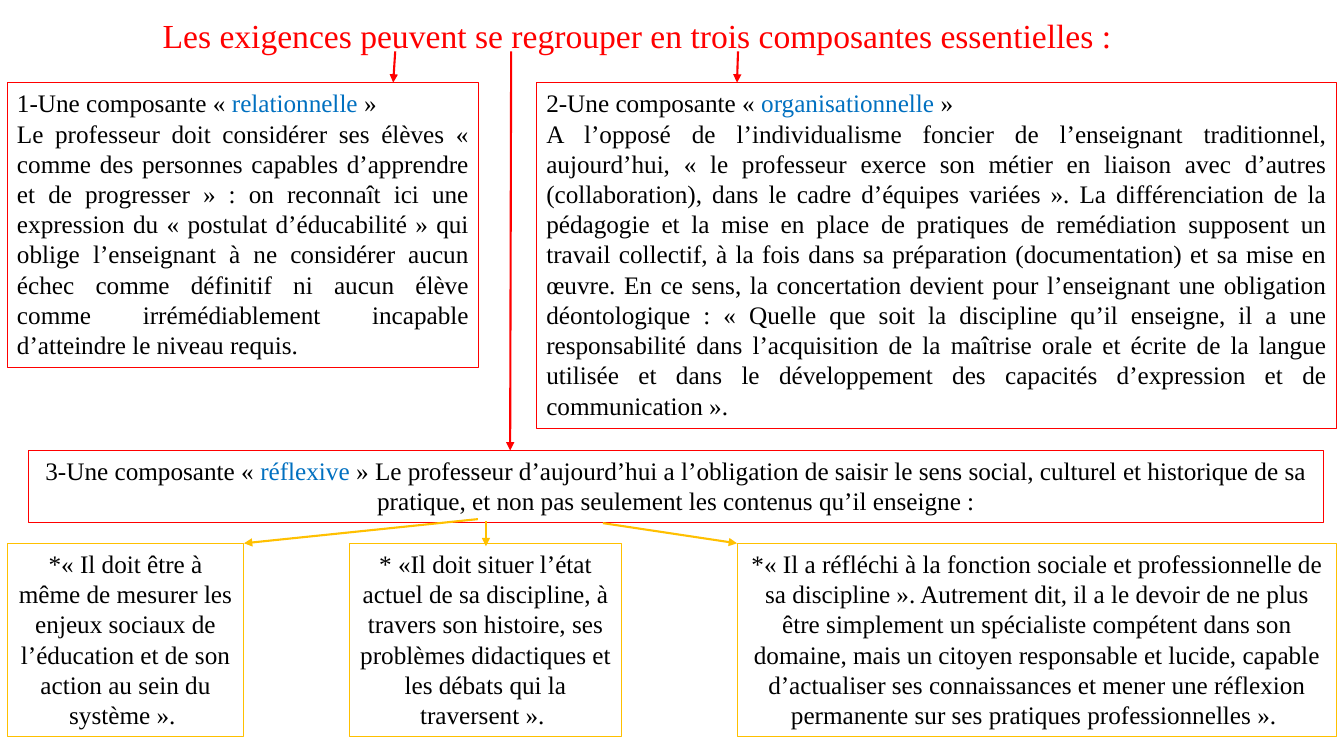
from lxml import etree
from pptx import Presentation
from pptx.dml.color import RGBColor
from pptx.enum.shapes import MSO_CONNECTOR, MSO_SHAPE
from pptx.enum.text import MSO_ANCHOR, MSO_AUTO_SIZE, PP_ALIGN
from pptx.oxml.ns import qn
from pptx.util import Inches, Pt

CENTER, JUSTIFY = PP_ALIGN.CENTER, PP_ALIGN.JUSTIFY
TOP, NO_FIT = MSO_ANCHOR.TOP, MSO_AUTO_SIZE.NONE
RECTANGLE, STRAIGHT = MSO_SHAPE.RECTANGLE, MSO_CONNECTOR.STRAIGHT
TITLE_ONLY = 5
FONT = "Times New Roman"
COLORS = {"red": "FF0000", "gold": "FFC000", "blue": "0070C0", "black": "000000"}

TITLE = "Les exigences peuvent se regrouper en trois composantes essentielles :"

# Each paragraph is a list of (text, colour) runs.
RELATIONAL = [
    [("1-Une composante « ", "black"), ("relationnelle", "blue"), (" » ", "black")],
    [("Le professeur doit considérer ses élèves « comme des personnes capables "
      "d’apprendre et de progresser » : on reconnaît ici une expression du "
      "« postulat d’éducabilité » qui oblige l’enseignant à ne considérer aucun "
      "échec comme définitif ni aucun élève comme irrémédiablement incapable "
      "d’atteindre le niveau requis.", "black")],
]
ORGANISATIONAL = [
    [("2-Une composante « ", "black"), ("organisationnelle", "blue"), (" » ", "black")],
    [("A l’opposé de l’individualisme foncier de l’enseignant traditionnel, "
      "aujourd’hui, « le professeur exerce son métier en liaison avec d’autres "
      "(collaboration), dans le cadre d’équipes variées ». La différenciation de "
      "la pédagogie et la mise en place de pratiques de remédiation supposent un "
      "travail collectif, à la fois dans sa préparation (documentation) et sa "
      "mise en œuvre. En ce sens, la concertation devient pour l’enseignant une "
      "obligation déontologique : « Quelle que soit la discipline qu’il enseigne, "
      "il a une responsabilité dans l’acquisition de la maîtrise orale et écrite "
      "de la langue utilisée et dans le développement des capacités d’expression "
      "et de communication ».", "black")],
]
REFLEXIVE = [
    [("3-Une composante « ", "black"), ("réflexive", "blue"),
     (" » Le professeur d’aujourd’hui a l’obligation de saisir le sens social, "
      "culturel et historique de sa pratique, et non pas seulement les contenus "
      "qu’il enseigne :", "black")],
]
SOCIAL_STAKES = [
    [("*« Il doit être à même de mesurer les enjeux sociaux de l’éducation et de "
      "son action au sein du système ». ", "black")],
]
DISCIPLINE_STATE = [
    [("* «Il doit situer l’état actuel de sa discipline, à travers son histoire, "
      "ses problèmes didactiques et les débats qui la traversent ». ", "black")],
]
SOCIAL_FUNCTION = [
    [("*« Il a réfléchi à la fonction sociale et professionnelle de sa "
      "discipline ». Autrement dit, il a le devoir de ne plus être simplement un "
      "spécialiste compétent dans son domaine, mais un citoyen responsable et "
      "lucide, capable d’actualiser ses connaissances et mener une réflexion "
      "permanente sur ses pratiques professionnelles ». ", "black")],
]

LEFT, RIGHT = 0.07, 13.26
TITLE_BOTTOM, COMPONENT_TOP, REFLEXIVE_TOP, DUTY_TOP = 0.51, 0.82, 4.47, 5.39
DUTY_HEIGHT = 1.92

# Paragraphs, (left, top, right, height), border colour, alignment
BOXES = [
    (RELATIONAL, (LEFT, COMPONENT_TOP, 4.75, 2.83), "red", JUSTIFY),
    (REFLEXIVE, (0.28, REFLEXIVE_TOP, 13.13, 0.71), "red", CENTER),
    (ORGANISATIONAL, (5.32, COMPONENT_TOP, RIGHT, 3.43), "red", JUSTIFY),
    (SOCIAL_STAKES, (LEFT, DUTY_TOP, 2.42, DUTY_HEIGHT), "gold", CENTER),
    (DISCIPLINE_STATE, (3.47, DUTY_TOP, 6.16, DUTY_HEIGHT), "gold", CENTER),
    (SOCIAL_FUNCTION, (7.31, DUTY_TOP, RIGHT, DUTY_HEIGHT), "gold", CENTER),
]

# Start, end, colour
ARROWS = [
    ((3.92, TITLE_BOTTOM), (3.9, COMPONENT_TOP), "red"),
    ((7.32, TITLE_BOTTOM), (7.31, COMPONENT_TOP), "red"),
    ((5.07, TITLE_BOTTOM), (5.06, REFLEXIVE_TOP), "red"),
    ((4.82, 5.17), (4.82, 5.42), "gold"),
    ((4.74, 5.15), (2.42, DUTY_TOP), "gold"),
    ((5.98, 5.19), (7.31, DUTY_TOP), "gold"),
]


def rgb(color):
    return RGBColor.from_string(COLORS[color])


def write_text(frame, paragraphs, size=18, align=CENTER):
    frame.word_wrap = True
    frame.auto_size = NO_FIT
    frame.vertical_anchor = TOP
    frame.margin_left = frame.margin_right = Inches(0.1)
    frame.margin_top = frame.margin_bottom = Inches(0.05)
    for index, runs in enumerate(paragraphs):
        paragraph = frame.add_paragraph() if index else frame.paragraphs[0]
        paragraph.alignment = align
        for text, color in runs:
            run = paragraph.add_run()
            run.text = text
            run.font.name = FONT
            run.font.size = Pt(size)
            run.font.color.rgb = rgb(color)


def add_box(slide, paragraphs, edges, color, align):
    left, top, right, height = edges
    box = slide.shapes.add_shape(RECTANGLE, Inches(left), Inches(top),
                                 Inches(right - left), Inches(height))
    box.shadow.inherit = False
    box.fill.background()
    box.line.color.rgb = rgb(color)
    box.line.width = Pt(0.75)
    write_text(box.text_frame, paragraphs, align=align)


def add_arrow(slide, start, end, color):
    points = [Inches(value) for value in (*start, *end)]
    arrow = slide.shapes.add_connector(STRAIGHT, *points)
    arrow.line.color.rgb = rgb(color)
    arrow.line.width = Pt(1.5)
    properties = arrow.element.spPr
    etree.SubElement(properties.find(qn("a:ln")), qn("a:tailEnd"), type="triangle")
    etree.SubElement(properties, qn("a:effectLst"))


def main():
    presentation = Presentation()
    presentation.slide_width = Inches(13.33)
    presentation.slide_height = Inches(7.5)
    slide = presentation.slides.add_slide(presentation.slide_layouts[TITLE_ONLY])

    title = slide.shapes.title
    title.left, title.top = Inches(1.41), Inches(0.1)
    title.width, title.height = Inches(9.82), Inches(0.5)
    write_text(title.text_frame, [[(TITLE, "red")]], size=24)

    for box in BOXES:
        add_box(slide, *box)
    for arrow in ARROWS:
        add_arrow(slide, *arrow)
    presentation.save("out.pptx")


if __name__ == "__main__":
    main()
